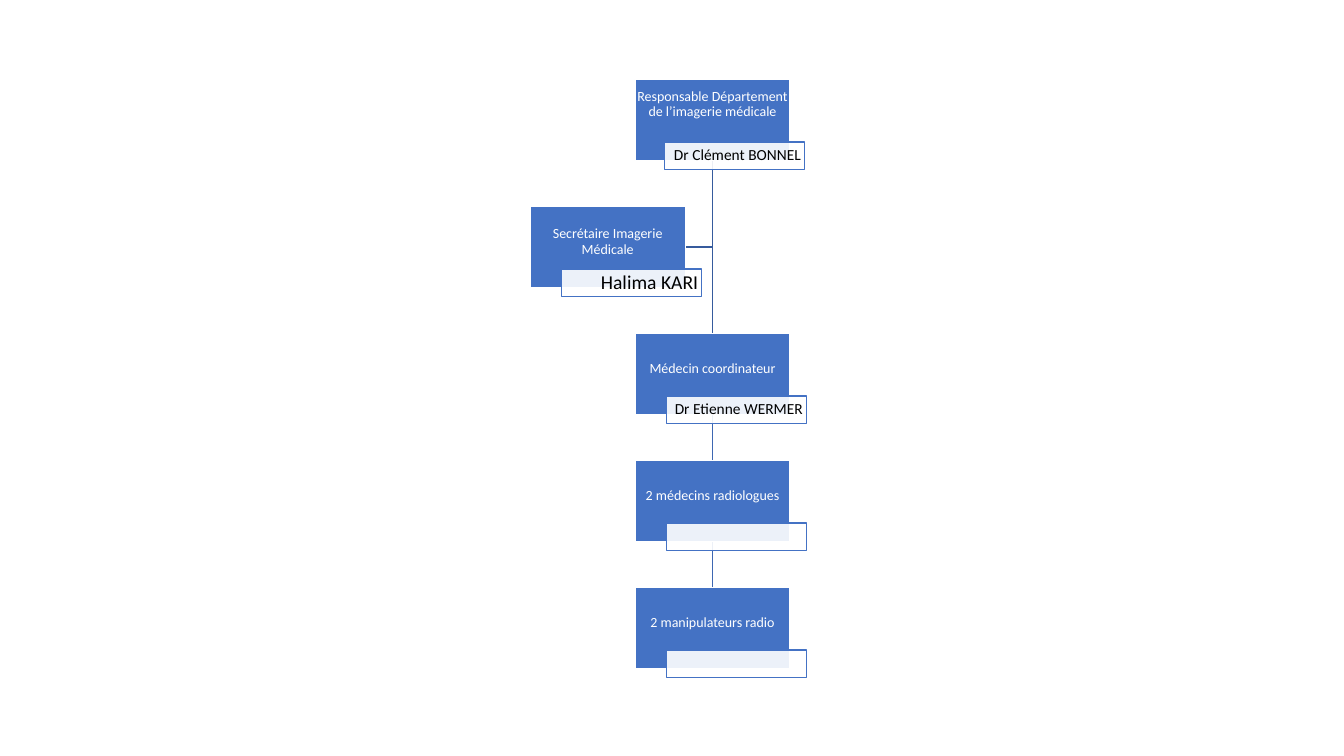
"""Organisation chart of a medical imaging department."""
from dataclasses import dataclass

from lxml.etree import SubElement
from pptx import Presentation
from pptx.dml.color import RGBColor
from pptx.enum.shapes import MSO_CONNECTOR, MSO_SHAPE
from pptx.enum.text import MSO_ANCHOR, PP_ALIGN
from pptx.oxml.ns import qn
from pptx.util import Cm, Pt

POSTS = [
    {"role": "Responsable Département de l’imagerie médicale",
     "name": "Dr Clément BONNEL", "tag_dx": 0.74, "bottom": 0.82},
    {"role": "Secrétaire Imagerie Médicale", "name": "Halima KARI",
     "name_size": 14, "left": 13.36},
    {"role": "Médecin coordinateur", "name": "Dr Etienne WERMER"},
    {"role": "2 médecins radiologues"},
    {"role": "2 manipulateurs radio"},
]
LINKS = [(0, 2, "trunk"), (2, 3, "branch"), (3, 4, "branch")]
ASSISTANT = 1

LEFT, TOP, STEP = 16, 2.01, 3.2
BOX_W, BOX_H = 3.91, 2.03
TAG_W, TAG_H, TAG_DX, TAG_DY = 3.53, 0.69, 0.79, 1.57
AXIS = LEFT + BOX_W / 2


@dataclass(frozen=True)
class Theme:
    font: str = "Calibri"
    blue: str = "4472C4"
    white: str = "FFFFFF"
    black: str = "000000"
    trunk: str = "365B9D"
    branch: str = "3E67B2"
    role_size: float = 10
    name_size: float = 11
    line: float = 1
    tag_alpha: int = 90


THEME = Theme()


def rgb(code):
    return RGBColor.from_string(code)


def set_all(obj, values):
    for key, value in values.items():
        setattr(obj, key, value)


def add_link(s, x1, y1, x2, y2, color):
    ln = s.shapes.add_connector(MSO_CONNECTOR.STRAIGHT, *map(Cm, (x1, y1, x2, y2)))
    ln.line.color.rgb = rgb(color)
    ln.line.width = Pt(THEME.line)
    SubElement(ln._element.spPr, qn("a:effectLst"))


def add_rect(s, x, y, w, h, fill, line):
    sp = s.shapes.add_shape(MSO_SHAPE.RECTANGLE, *map(Cm, (x, y, w, h)))
    sp.shadow.inherit = False
    sp.fill.solid()
    sp.fill.fore_color.rgb = rgb(fill)
    sp.line.color.rgb = rgb(line)
    sp.line.width = Pt(THEME.line)
    return sp


def write(sp, text, size, color, align, side, bottom):
    tf = sp.text_frame
    set_all(tf, {"word_wrap": True, "vertical_anchor": MSO_ANCHOR.MIDDLE,
                 "margin_left": Cm(side), "margin_right": Cm(side),
                 "margin_top": Cm(0.03), "margin_bottom": Cm(bottom)})
    p = tf.paragraphs[0]
    set_all(p, {"alignment": align, "line_spacing": 0.9})
    r = p.add_run()
    r.text = text
    set_all(r.font, {"name": THEME.font, "size": Pt(size)})
    r.font.color.rgb = rgb(color)


def add_post(s, row, post):
    x, y = post.get("left", LEFT), TOP + row * STEP
    box = add_rect(s, x, y, BOX_W, BOX_H, THEME.blue, THEME.white)
    write(box, post["role"], THEME.role_size, THEME.white,
          PP_ALIGN.CENTER, 0.03, post.get("bottom", 0.28))
    tag = add_rect(s, x + post.get("tag_dx", TAG_DX), y + TAG_DY,
                   TAG_W, TAG_H, THEME.white, THEME.blue)
    color = tag._element.spPr.find(qn("a:solidFill"))[0]
    SubElement(color, qn("a:alpha"), val=str(THEME.tag_alpha * 1000))
    if "name" in post:
        write(tag, post["name"], post.get("name_size", THEME.name_size),
              THEME.black, PP_ALIGN.RIGHT, 0.08, 0.03)


def main():
    prs = Presentation()
    set_all(prs, {"slide_width": Cm(33.87), "slide_height": Cm(19.05)})
    s = prs.slides.add_slide(prs.slide_layouts[6])
    for start, end, kind in LINKS:
        add_link(s, AXIS, TOP + start * STEP + BOX_H,
                 AXIS, TOP + end * STEP, getattr(THEME, kind))
    middle = TOP + ASSISTANT * STEP + BOX_H / 2
    add_link(s, POSTS[ASSISTANT]["left"] + BOX_W, middle, AXIS, middle, THEME.trunk)
    for row, post in enumerate(POSTS):
        add_post(s, row, post)
    prs.save("out.pptx")


if __name__ == "__main__":
    main()
